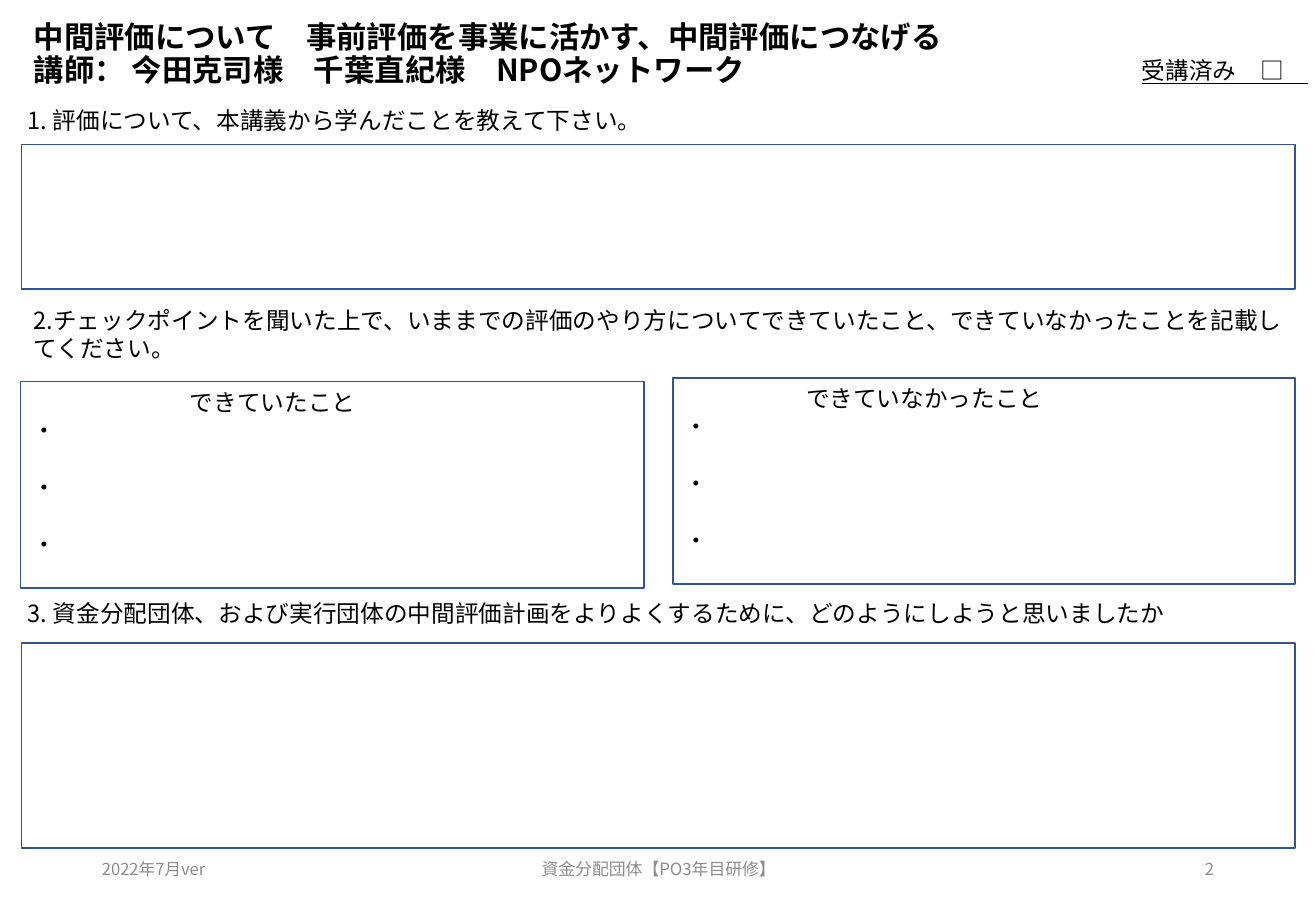
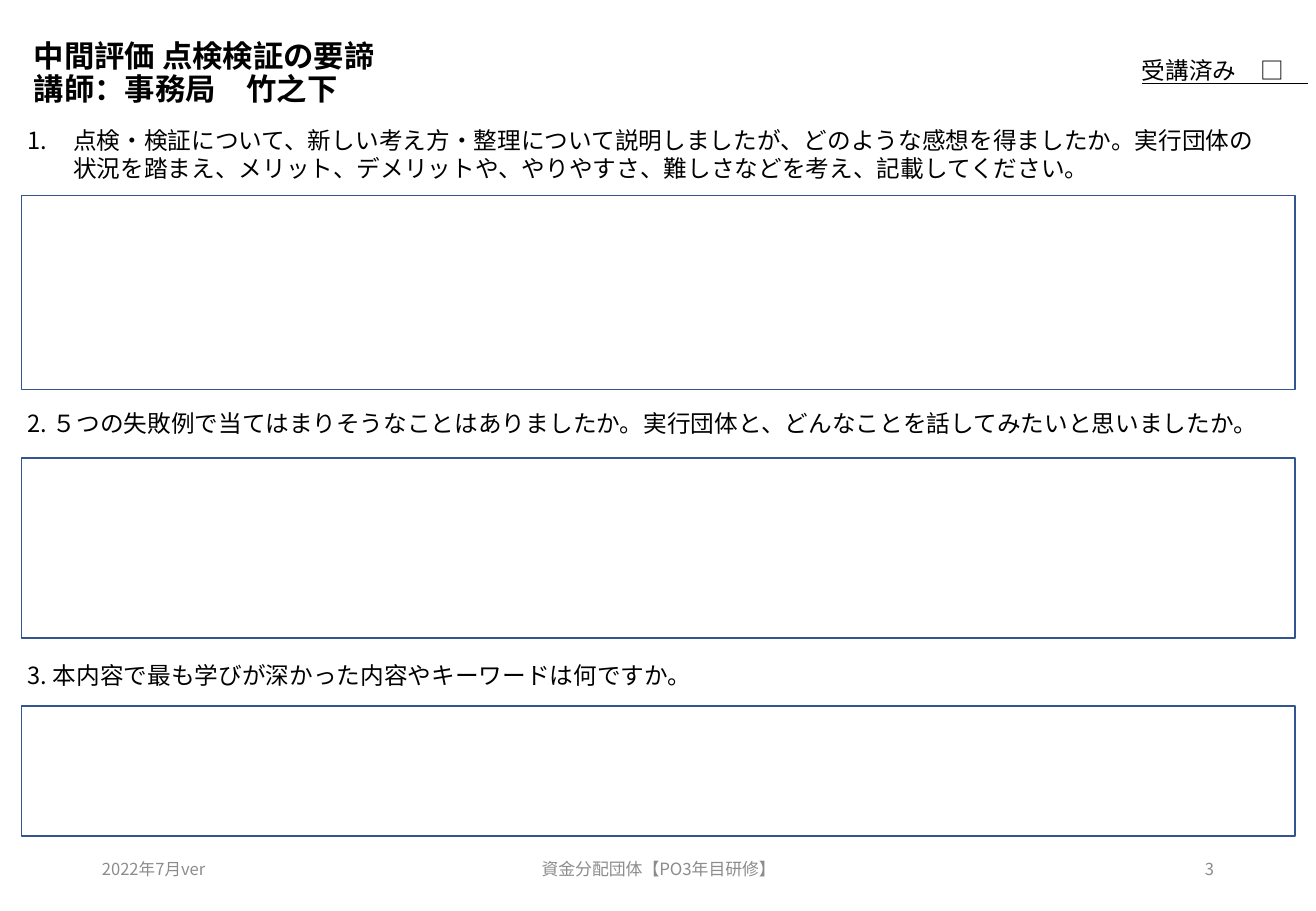
from lxml import etree
from pptx import Presentation
from pptx.dml.color import RGBColor
from pptx.enum import shapes, text
from pptx.oxml import ns
from pptx.util import Cm, Pt

COLORS = {"text": "000000", "footer": "8C8C8C", "line": "325491", "box": "FFFFFF"}
FONT = "Noto Sans CJK JP"
LEFT, ALIGN = text.PP_ALIGN.LEFT, text.PP_ALIGN
MIDDLE, TOP = text.MSO_ANCHOR.MIDDLE, text.MSO_ANCHOR.TOP
QUESTION_LEFT, BOX_LEFT, FULL_WIDTH = 0.33, 0.45, 26.62
ITEM_GAP = 16.9


def write(shape, lines, size=14, color="text", bold=False, underline=False,
          align=LEFT, anchor=TOP, spacing=None, indent=0, gap=0, numbered=False):
    """Fill a shape with one paragraph per line.

    indent (cm) moves the first line; gap (pt) precedes every line from the third on.
    """
    frame = shape.text_frame
    frame.word_wrap = True
    frame.vertical_anchor = anchor
    for index, line in enumerate(lines):
        paragraph = frame.paragraphs[0] if index == 0 else frame.add_paragraph()
        paragraph.alignment = align
        paragraph.line_spacing = spacing
        if index > 1:
            paragraph.space_before = Pt(gap)
        properties = paragraph._p.get_or_add_pPr()
        if index == 0 and indent:
            properties.set("marL", str(Cm(indent)))
        if numbered:
            properties.set("indent", str(-Cm(indent)))
            etree.SubElement(properties, ns.qn("a:buAutoNum"), type="arabicPeriod")
        run = paragraph.add_run()
        run.text = line
        font = run.font
        font.name, font.size, font.bold, font.underline = FONT, Pt(size), bold, underline
        font.color.rgb = RGBColor.from_string(COLORS[color])
        etree.SubElement(run._r.get_or_add_rPr(), ns.qn("a:ea"), typeface=FONT)


def add_answer_box(slide, left, top, width, height):
    box = slide.shapes.add_shape(shapes.MSO_SHAPE.RECTANGLE,
                                 Cm(left), Cm(top), Cm(width), Cm(height))
    box.shadow.inherit = False
    box.fill.solid()
    box.fill.fore_color.rgb = RGBColor.from_string(COLORS["box"])
    box.line.color.rgb = RGBColor.from_string(COLORS["line"])
    box.line.width = Pt(1)
    return box


# Questions: left, top, height, text, format. Answers: top, height.
# Columns: left, top, width, heading, heading indent.
worksheets = [
    {
        "number": 2,
        "title": ["中間評価について　事前評価を事業に活かす、中間評価につなげる",
                  "講師： 今田克司様　千葉直紀様　NPOネットワーク"],
        "title_place": (BOX_LEFT, -0.1, 25.2, 2.51),
        "questions": [
            (QUESTION_LEFT, 2.08, 0.86,
             "1. 評価について、本講義から学んだことを教えて下さい。", {}),
            (BOX_LEFT, 6.27, 1.45,
             "2.チェックポイントを聞いた上で、いままでの評価のやり方について"
             "できていたこと、できていなかったことを記載してください。", {}),
            (QUESTION_LEFT, 12.4, 0.86,
             "3. 資金分配団体、および実行団体の中間評価計画をよりよくするために、"
             "どのようにしようと思いましたか", {}),
        ],
        "answers": [(3.02, 3.02), (13.44, 4.29)],
        "columns": [(0.43, 7.98, 13.03, "できていたこと", 3.29),
                    (14.07, 7.9, 13, "できていなかったこと", 2.53)],
    },
    {
        "number": 3,
        "title": ["中間評価 点検検証の要諦", "講師：事務局　竹之下"],
        "title_place": (BOX_LEFT, 0.38, 23.72, 2.34),
        "questions": [
            (QUESTION_LEFT, 2.51, 1.45,
             "点検・検証について、新しい考え方・整理について説明しましたが、"
             "どのような感想を得ましたか。実行団体の状況を踏まえ、メリット、"
             "デメリットや、やりやすさ、難しさなどを考え、記載してください。",
             {"numbered": True, "indent": 0.95}),
            (QUESTION_LEFT, 8.43, 0.86,
             "2. ５つの失敗例で当てはまりそうなことはありましたか。"
             "実行団体と、どんなことを話してみたいと思いましたか。", {}),
            (QUESTION_LEFT, 13.69, 0.86,
             "3. 本内容で最も学びが深かった内容やキーワードは何ですか。", {}),
        ],
        "answers": [(4.09, 4.06), (9.58, 3.76), (14.76, 2.72)],
        "columns": [],
    },
]

presentation = Presentation()
presentation.slide_width, presentation.slide_height = Cm(27.51), Cm(19.05)
title_only = presentation.slide_layouts[5]

for sheet in worksheets:
    slide = presentation.slides.add_slide(title_only)
    title = slide.shapes.title
    title.left, title.top, title.width, title.height = map(Cm, sheet["title_place"])
    write(title, sheet["title"], size=18, bold=True, anchor=MIDDLE, spacing=0.9)

    for top, height in sheet["answers"]:
        add_answer_box(slide, BOX_LEFT, top, FULL_WIDTH, height)

    for left, top, width, heading, indent in sheet["columns"]:
        column = add_answer_box(slide, left, top, width, 4.32)
        write(column, [heading, "・", "・", "・"], indent=indent, gap=ITEM_GAP)

    for left, top, height, question, style in sheet["questions"]:
        box = slide.shapes.add_textbox(Cm(left), Cm(top), Cm(FULL_WIDTH), Cm(height))
        write(box, [question], **style)

    attended = slide.shapes.add_textbox(Cm(23.62), Cm(1.05), Cm(5.1), Cm(0.86))
    write(attended, ["受講済み　□　"], underline=True)

    for left, width, label, size, align in [
        (1.88, 6.2, "2022年7月ver", 9.8, ALIGN.LEFT),
        (9.12, 9.3, "資金分配団体【PO3年目研修】", 10, ALIGN.CENTER),
        (19.43, 6.2, str(sheet["number"]), 9.8, ALIGN.RIGHT),
    ]:
        footer = slide.shapes.add_textbox(Cm(left), Cm(17.65), Cm(width), Cm(1.02))
        write(footer, [label], size=size, color="footer", align=align, anchor=MIDDLE)

presentation.save("out.pptx")
